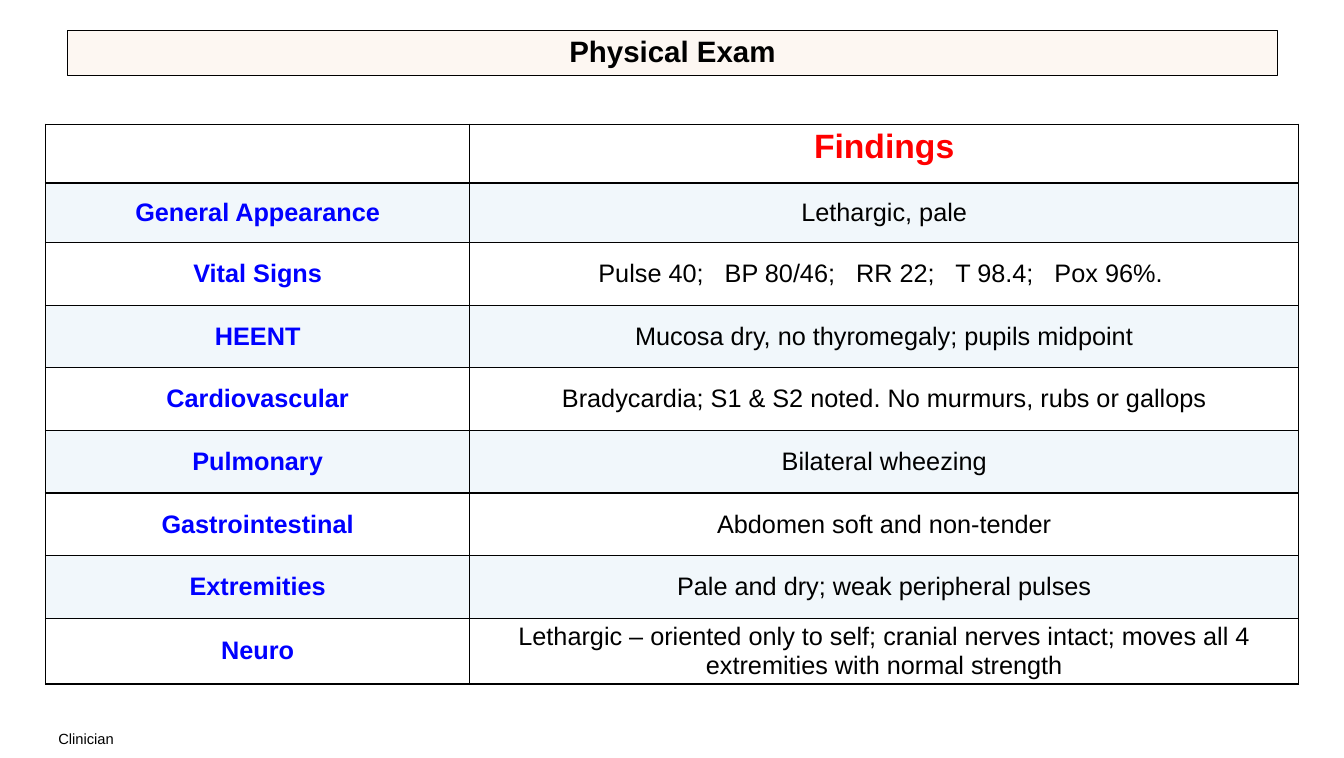
import pptx
import pptx.util
import pptx.dml.color
import pptx.enum.text
import pptx.oxml
import pptx.oxml.ns
from pptx.util import Inches

TITLE = "Physical Exam"
FOOTER = "Clinician"
EXAM = [
    ("", "Findings"),
    ("General Appearance", "Lethargic, pale"),
    ("Vital Signs", "Pulse 40;   BP 80/46;   RR 22;   T 98.4;   Pox 96%. "),
    ("HEENT", "Mucosa dry, no thyromegaly; pupils midpoint"),
    ("Cardiovascular", "Bradycardia; S1 & S2 noted. No murmurs, rubs or gallops"),
    ("Pulmonary", "Bilateral wheezing"),
    ("Gastrointestinal", "Abdomen soft and non-tender"),
    ("Extremities", "Pale and dry; weak peripheral pulses"),
    ("Neuro", "Lethargic – oriented only to self; cranial nerves intact; "
              "moves all 4 extremities with normal strength"),
]
COLUMN_WIDTHS = [4.2, 8.2]
ROW_HEIGHTS = [0.58, 0.59] + [0.62] * 6 + [0.65]
COLORS = {"text": "000000", "system": "0000FF", "heading": "FF0000",
          "title_fill": "FDF0E7", "band": "BDD7EE"}
FONT = "Arial"
CENTER = pptx.enum.text.PP_ALIGN.CENTER
MIDDLE = pptx.enum.text.MSO_ANCHOR.MIDDLE
TOP = pptx.enum.text.MSO_ANCHOR.TOP


def rgb(name):
    return pptx.dml.color.RGBColor.from_string(COLORS[name])


def write(frame, text, size, color="text", bold=False, align=None):
    frame.text = text
    paragraph = frame.paragraphs[0]
    paragraph.alignment = align
    for run in paragraph.runs:
        run.font.name = FONT
        run.font.size = pptx.util.Pt(size)
        run.font.bold = bold
        run.font.color.rgb = rgb(color)
    return paragraph


def fill_tint(part, properties, color, opacity):
    part.fill.solid()
    part.fill.fore_color.rgb = rgb(color)
    tint = properties.find(pptx.oxml.ns.qn("a:solidFill"))[0]
    alpha = pptx.oxml.parse_xml(
        f'<a:alpha {pptx.oxml.ns.nsdecls("a")} val="{opacity * 1000}"/>')
    tint.append(alpha)


def add_borders(properties):
    for index, side in enumerate("LRTB"):
        border = pptx.oxml.parse_xml(
            f'<a:ln{side} {pptx.oxml.ns.nsdecls("a")} w="12700"><a:solidFill>'
            f'<a:srgbClr val="{COLORS["text"]}"/></a:solidFill></a:ln{side}>')
        properties.insert(index, border)


def add_title(slide):
    title = slide.shapes.title
    title.left, title.top = Inches(0.67), Inches(0.3)
    title.width, title.height = Inches(11.97), Inches(0.45)
    fill_tint(title, title.element.spPr, "title_fill", 50)
    title.line.color.rgb = rgb("text")
    title.line.width = pptx.util.Pt(0.75)
    title.text_frame.vertical_anchor = MIDDLE
    write(title.text_frame, TITLE, 21, bold=True, align=CENTER).line_spacing = 0.9


def add_exam_table(slide):
    table = slide.shapes.add_table(
        len(EXAM), len(COLUMN_WIDTHS), Inches(0.45), Inches(1.23),
        Inches(sum(COLUMN_WIDTHS)), Inches(sum(ROW_HEIGHTS))).table
    for column, width in zip(table.columns, COLUMN_WIDTHS):
        column.width = Inches(width)
    for row, height in zip(table.rows, ROW_HEIGHTS):
        row.height = Inches(height)
    for r, findings in enumerate(EXAM):
        for c, text in enumerate(findings):
            cell = table.cell(r, c)
            cell.margin_top = cell.margin_bottom = Inches(0.04)
            cell.vertical_anchor = MIDDLE if r else TOP
            color = "heading" if r == 0 else ("system", "text")[c]
            write(cell.text_frame, text, 18 if r else 24, color,
                  bold=color != "text", align=CENTER)
            properties = cell._tc.get_or_add_tcPr()
            if r % 2:
                fill_tint(cell, properties, "band", 20)
            else:
                cell.fill.background()
            add_borders(properties)


def add_footer(slide):
    footer = slide.shapes.add_textbox(
        Inches(0.48), Inches(7.17), Inches(0.76), Inches(0.28)).text_frame
    footer.word_wrap = False
    footer.auto_size = pptx.enum.text.MSO_AUTO_SIZE.SHAPE_TO_FIT_TEXT
    write(footer, FOOTER, 10.5)


def main():
    deck = pptx.Presentation()
    deck.slide_width, deck.slide_height = Inches(13.3), Inches(7.5)
    slide = deck.slides.add_slide(deck.slide_layouts[5])
    add_title(slide)
    add_exam_table(slide)
    add_footer(slide)
    deck.save("out.pptx")


if __name__ == "__main__":
    main()
